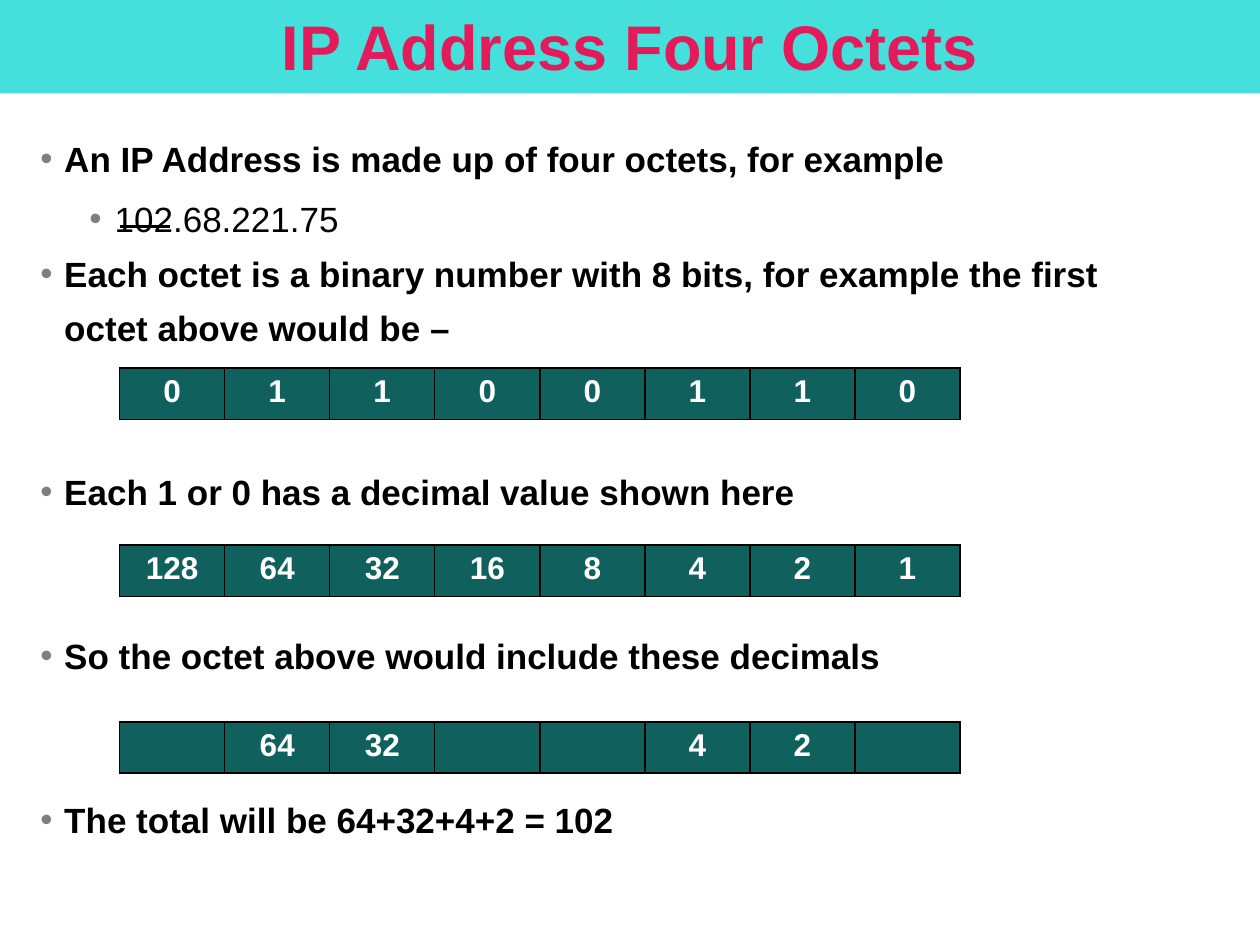
from lxml import etree
from pptx import Presentation, oxml, util as u
from pptx.dml.color import RGBColor
from pptx.enum import shapes, text
from pptx.oxml import ns

COLORS = {"band": "45E0DC", "title": "E41B5B", "ink": "000000",
          "bullet": "7F7F7F", "cell": "10605E", "digit": "FFFFFF"}
COLUMNS, ROWS = 100, 75
BULLETS = [
    ("An IP Address is made up of four octets, for example", 0, 0),
    ("102.68.221.75", 1, 0),
    ("Each octet is a binary number with 8 bits, for example the first octet above would be –", 0, 0),
    ("Each 1 or 0 has a decimal value shown here", 0, 2),
    ("So the octet above would include these decimals", 0, 2),
    ("The total will be 64+32+4+2 = 102", 0, 2),
]
BITS = [0, 1, 1, 0, 0, 1, 1, 0]
WEIGHTS = [2 ** power for power in reversed(range(8))]
INCLUDED = [weight if bit else "" for bit, weight in zip(BITS, WEIGHTS)]


class SlideBuilder:
    """Draws styled elements on one slide, placed on a 100 by 75 grid."""

    font = "Arial"
    line_pitch = 31.2
    levels = [(0.19, 0.19, line_pitch), (0.59, 0.2, 34.3)]

    def __init__(self, deck):
        self.deck = deck
        self.slide = deck.slides.add_slide(deck.slide_layouts[5])

    def place(self, left, top, width, height):
        across = self.deck.slide_width / COLUMNS
        down = self.deck.slide_height / ROWS
        return [int(left * across), int(top * down), int(width * across), int(height * down)]

    def color(self, name):
        return RGBColor.from_string(COLORS[name])

    def fill(self, target, name):
        target.fill.solid()
        target.fill.fore_color.rgb = self.color(name)

    def add_span(self, para, words, size, color, bold=True):
        span = para.add_run()
        span.text = str(words)
        span.font.name, span.font.size, span.font.bold = self.font, u.Pt(size), bold
        span.font.color.rgb = self.color(color)

    def frame(self, box, top=0):
        frame = box.text_frame
        frame.word_wrap = True
        frame.auto_size = text.MSO_AUTO_SIZE.NONE
        frame.vertical_anchor = text.MSO_ANCHOR.TOP
        frame.margin_left = frame.margin_right = frame.margin_bottom = 0
        frame.margin_top = u.Inches(top)
        return frame

    def title(self, words, *area):
        box = self.slide.shapes.title
        box.left, box.top, box.width, box.height = self.place(*area)
        self.fill(box, "band")
        para = self.frame(box, 0.06).paragraphs[0]
        para.alignment = text.PP_ALIGN.CENTER
        self.add_span(para, words, 36, "title")

    def bullets(self, items, *area):
        frame = self.frame(self.slide.shapes.add_textbox(*self.place(*area)))
        for index, (words, level, gap) in enumerate(items):
            para = frame.add_paragraph() if index else frame.paragraphs[0]
            indent, hang, pitch = self.levels[level]
            para.level = level
            para.line_spacing = u.Pt(pitch)
            para.space_before = u.Pt(gap * self.line_pitch)
            props = para._p.get_or_add_pPr()
            props.set("marL", str(u.Inches(indent)))
            props.set("indent", str(-u.Inches(hang)))
            tint = etree.SubElement(props, ns.qn("a:buClr"))
            etree.SubElement(tint, ns.qn("a:srgbClr"), val=COLORS["bullet"])
            etree.SubElement(props, ns.qn("a:buFont"), typeface=self.font)
            etree.SubElement(props, ns.qn("a:buChar"), char="•")
            self.add_span(para, words, 20, "ink", bold=level == 0)

    def border(self, cell):
        props = cell._tc.get_or_add_tcPr()
        for side in "LRTB":
            props.append(oxml.parse_xml(
                f'<a:ln{side} {ns.nsdecls("a")} w="{u.Pt(1)}"><a:solidFill>'
                f'<a:srgbClr val="{COLORS["ink"]}"/></a:solidFill></a:ln{side}>'))

    def octet(self, values, *area):
        table = self.slide.shapes.add_table(1, len(values), *self.place(*area)).table
        table.first_row = table.horz_banding = False
        for cell, value in zip(table.iter_cells(), values):
            self.border(cell)
            self.fill(cell, "cell")
            para = cell.text_frame.paragraphs[0]
            para.alignment = text.PP_ALIGN.CENTER
            if value != "":
                self.add_span(para, value, 18, "digit")

    def underline(self, left, top, width):
        x, y, length, _ = self.place(left, top, width, 0)
        line = self.slide.shapes.add_connector(shapes.MSO_CONNECTOR.STRAIGHT, x, y, x + length, y)
        line.line.width = u.Pt(1.5)
        line.line.color.rgb = self.color("ink")
        etree.SubElement(line._element.spPr, ns.qn("a:effectLst"))


def main():
    deck = Presentation()
    deck.slide_width, deck.slide_height = u.Inches(10), u.Inches(7.5)
    page = SlideBuilder(deck)
    page.title("IP Address Four Octets", 0, 0, 100, 7.4)
    page.bullets(BULLETS, 3.2, 9.9, 85.4, 59.9)
    for index, (values, height) in enumerate([(BITS, 4.1), (WEIGHTS, 4.1), (INCLUDED, 3.8)]):
        page.octet(values, 9.5, 29.2 + 14.05 * index, 66.7, height)
    page.underline(9.5, 18, 4)
    deck.save("out.pptx")


if __name__ == "__main__":
    main()
